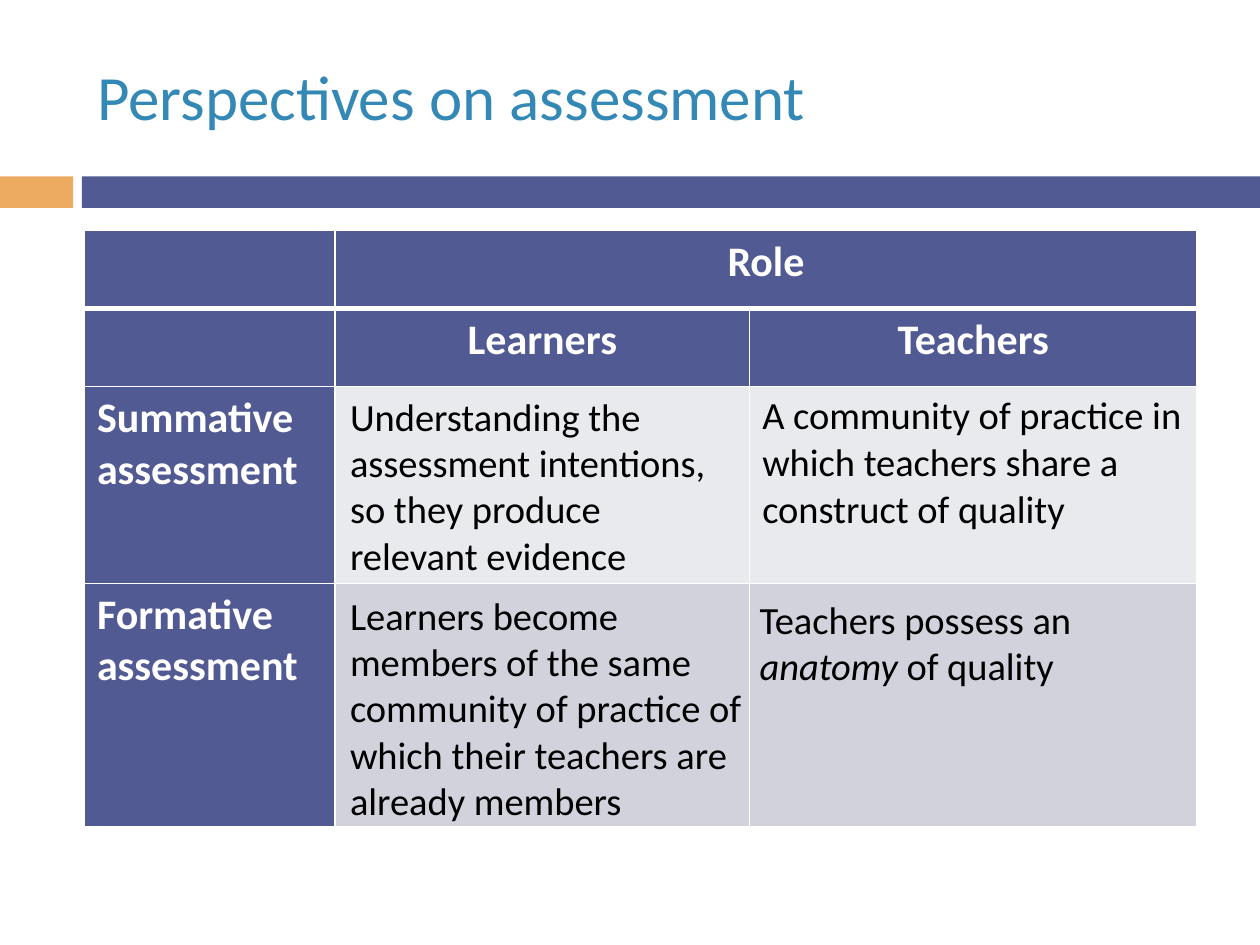
from dataclasses import dataclass

from lxml.etree import SubElement
from pptx import Presentation
from pptx.dml.color import RGBColor as Color
from pptx.enum.shapes import MSO_SHAPE as Preset
from pptx.enum.text import MSO_ANCHOR as Anchor, MSO_AUTO_SIZE as AutoSize, PP_ALIGN as Align
from pptx.oxml.ns import qn
from pptx.util import Inches, Pt


@dataclass(frozen=True)
class Theme:
    """Colours, font and type sizes of the deck."""
    font: str = "Calibri"
    title: str = "3488B6"
    accent: str = "EDAA61"
    header: str = "525A93"
    light: str = "E9EAEE"
    dark: str = "D1D2DC"
    white: str = "FFFFFF"
    black: str = "000000"
    title_size: int = 36
    head_size: int = 24
    body_size: int = 22


def write_text(frame, text, font, size, color, bold=False, align=Align.LEFT):
    """Write one paragraph, setting words between asterisks in italics."""
    para = frame.paragraphs[0]
    para.alignment = align
    for index, part in enumerate(text.split("*")):
        span = para.add_run()
        span.text = part
        span.font.name = font
        span.font.size = Pt(size)
        span.font.bold = bold
        span.font.italic = index % 2 == 1
        span.font.color.rgb = Color.from_string(color)


def fill_with(target, color):
    """Give a shape or cell a solid fill."""
    target.fill.solid()
    target.fill.fore_color.rgb = Color.from_string(color)


def set_borders(cell, color, **widths):
    """Draw the cell borders in points, ahead of the fill."""
    properties = cell._tc.get_or_add_tcPr()
    for index, side in enumerate("LRTB"):
        line = properties.makeelement(qn(f"a:ln{side}"), {"w": str(Pt(widths.get(side, 1)))})
        solid = SubElement(line, qn("a:solidFill"))
        SubElement(solid, qn("a:srgbClr"), val=color)
        properties.insert(index, line)


class Page:
    """Holds the theme and the current slide."""

    def __init__(self, deck, theme):
        """Add a title-only slide."""
        self.theme = theme
        self.slide = deck.slides.add_slide(deck.slide_layouts[5])

    def title(self, text, *place):
        """Place and fill the title."""
        box = self.slide.shapes.title
        box.left, box.top, box.width, box.height = map(Inches, place)
        box.text_frame.vertical_anchor = Anchor.MIDDLE
        write_text(box.text_frame, text, font=self.theme.font,
                   size=self.theme.title_size, color=self.theme.title)

    def bar(self, color, *place):
        """Add a plain coloured band."""
        shape = self.slide.shapes.add_shape(Preset.RECTANGLE, *map(Inches, place))
        shape.shadow.inherit = False
        shape.line.fill.background()
        fill_with(shape, color)

    def text(self, text, *place):
        """Add a wrapped body text box."""
        frame = self.slide.shapes.add_textbox(*map(Inches, place)).text_frame
        frame.word_wrap = True
        frame.auto_size = AutoSize.SHAPE_TO_FIT_TEXT
        write_text(frame, text, font=self.theme.font,
                   size=self.theme.body_size, color=self.theme.black)

    def table(self, rows, left, top, widths, heights):
        """Add the grid with two header rows and a header column."""
        theme = self.theme
        place = map(Inches, (left, top, sum(widths), sum(heights)))
        table = self.slide.shapes.add_table(len(rows), len(widths), *place).table
        for column, width in zip(table.columns, widths):
            column.width = Inches(width)
        for row, height in zip(table.rows, heights):
            row.height = Inches(height)
        table.cell(0, 1).merge(table.cell(0, 2))
        fills = (theme.header, theme.header, theme.light, theme.dark)
        for r, texts in enumerate(rows):
            for c, text in enumerate(texts):
                cell = table.cell(r, c)
                is_head = r < 2 or c == 0
                fill_with(cell, theme.header if is_head else fills[r])
                set_borders(cell, theme.white, B=3 if r == 0 else 1, T=3 if r == 1 else 1)
                if text:
                    write_text(cell.text_frame, text, font=theme.font, bold=is_head,
                               size=theme.head_size if is_head else theme.body_size,
                               color=theme.white if is_head else theme.black,
                               align=Align.CENTER if r < 2 else Align.LEFT)


def main():
    """Build and save the deck."""
    deck = Presentation()
    deck.slide_width, deck.slide_height = Inches(10), Inches(7.5)
    theme = Theme()
    page = Page(deck, theme)
    page.bar(theme.accent, 0, 1.4, 0.58, 0.25)
    page.bar(theme.header, 0.65, 1.4, 9.35, 0.25)
    page.title("Perspectives on assessment", 0.67, 0.17, 8.83, 1.17)
    rows = [
        ("", "Role", ""),
        ("", "Learners", "Teachers"),
        ("Summative assessment", "",
         "A community of practice in which teachers share a construct of quality"),
        ("Formative assessment", "", ""),
    ]
    page.table(rows, 0.67, 1.83, widths=(1.99, 3.29, 3.55), heights=(0.62, 0.62, 1.56, 1.93))
    page.text("Understanding the assessment intentions, so they produce relevant evidence",
              2.68, 3.07, 3.25, 1.58)
    page.text("Learners become members of the same community of practice of which "
              "their teachers are already members", 2.68, 4.65, 3.44, 1.95)
    page.text("Teachers possess an *anatomy* of quality", 5.93, 4.68, 3.39, 0.84)
    deck.save("out.pptx")


if __name__ == "__main__":
    main()
